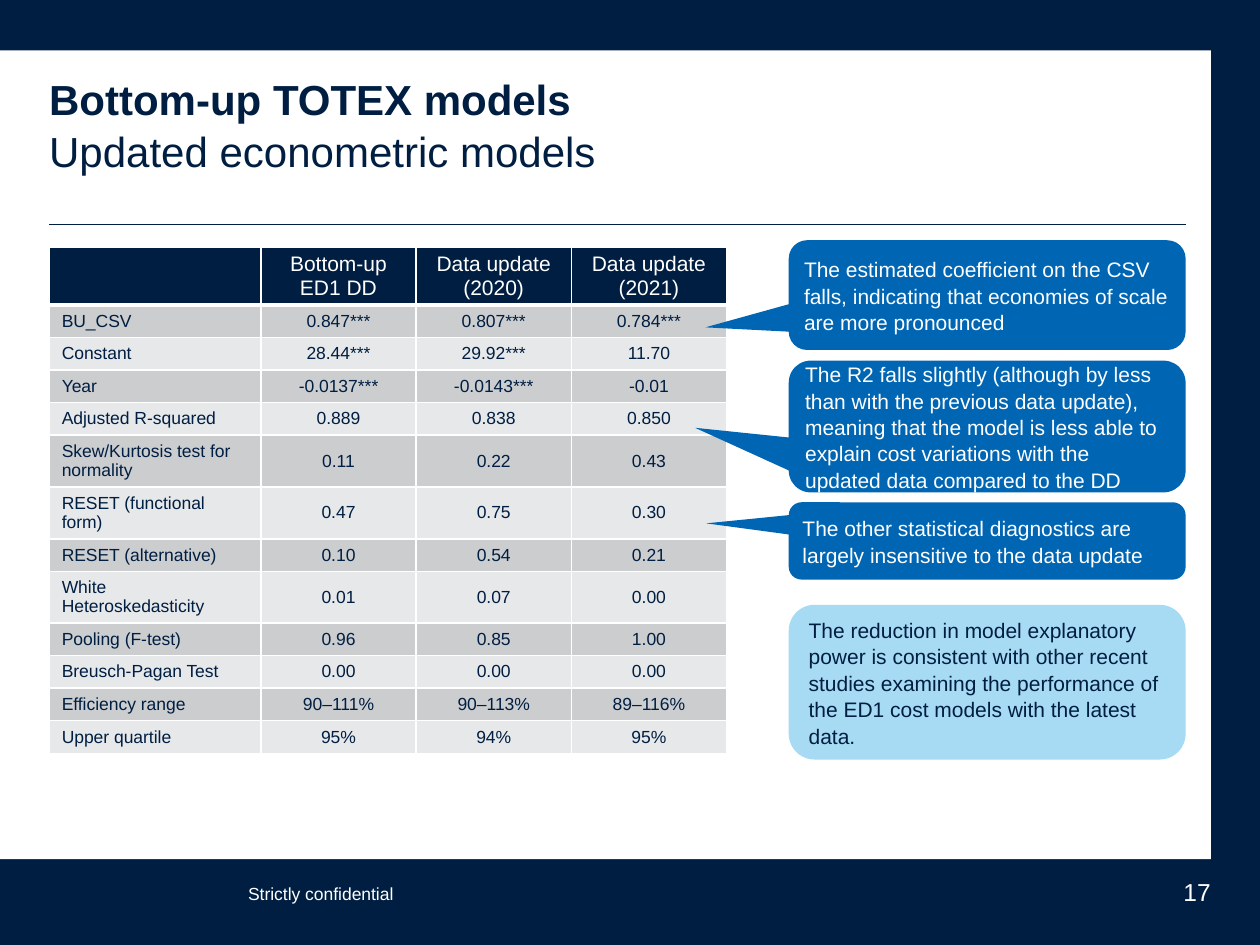
from lxml.etree import SubElement
from pptx import Presentation
from pptx.dml.color import RGBColor
from pptx.enum.shapes import MSO_CONNECTOR, MSO_SHAPE
from pptx.enum.text import MSO_ANCHOR, MSO_AUTO_SIZE, PP_ALIGN
from pptx.oxml.ns import qn
from pptx.util import Pt

NAVY = RGBColor(0x00, 0x1E, 0x41)
BLUE = RGBColor(0x00, 0x66, 0xB3)
SKY = RGBColor(0xA7, 0xDA, 0xF3)
DARK_BAND = RGBColor(0xCC, 0xCD, 0xCF)
LIGHT_BAND = RGBColor(0xE7, 0xE8, 0xE9)
WHITE = RGBColor(0xFF, 0xFF, 0xFF)

LEFT, RIGHT = 28.1, 677.5
CALLOUT_LEFT = 450.7

HEADER = ["", "Bottom-up\vED1 DD", "Data update (2020)", "Data update (2021)"]
RESULTS = [
    ["BU_CSV", "0.847***", "0.807***", "0.784***"],
    ["Constant", "28.44***", "29.92***", "11.70"],
    ["Year", "-0.0137***", "-0.0143***", "-0.01"],
    ["Adjusted R-squared", "0.889", "0.838", "0.850"],
    ["Skew/Kurtosis test for normality", "0.11", "0.22", "0.43"],
    ["RESET (functional form)", "0.47", "0.75", "0.30"],
    ["RESET (alternative)", "0.10", "0.54", "0.21"],
    ["White Heteroskedasticity", "0.01", "0.07", "0.00"],
    ["Pooling (F-test)", "0.96", "0.85", "1.00"],
    ["Breusch-Pagan Test", "0.00", "0.00", "0.00"],
    ["Efficiency range", "90–111%", "90–113%", "89–116%"],
    ["Upper quartile", "95%", "94%", "95%"],
]
TWO_LINE_ROWS = {5, 6, 8}

# top, height, pointer x and y, text
CALLOUTS = [
    (137.3, 62.7, -0.71, 0.294,
     "The estimated coefficient on the CSV falls, indicating that economies "
     "of scale are more pronounced"),
    (206.1, 75.3, -0.736, 0.01,
     "The R2 falls slightly (although by less than with the previous data "
     "update), meaning that the model is less able to explain cost variations "
     "with the updated data compared to the DD"),
    (287, 44.2, -0.708, -0.227,
     "The other statistical diagnostics are largely insensitive to the data update"),
]
CONCLUSION = (
    "The reduction in model explanatory power is consistent with other recent "
    "studies examining the performance of the ED1 cost models with the latest data."
)


def write(frame, text, size, color, align=PP_ALIGN.LEFT, spacing=1.0):
    para = frame.paragraphs[0]
    para.text = text
    para.alignment = align
    para.line_spacing = spacing
    for span in para.runs:
        span.font.name = "Arial"
        span.font.size = Pt(size)
        span.font.color.rgb = color


def set_margins(holder, side, upright):
    holder.margin_left = holder.margin_right = Pt(side)
    holder.margin_top = holder.margin_bottom = Pt(upright)


def add_block(page, kind, box, color):
    shape = page.shapes.add_shape(kind, *map(Pt, box))
    shape.shadow.inherit = False
    shape.fill.solid()
    shape.fill.fore_color.rgb = color
    shape.line.fill.background()
    return shape


def add_frame(page):
    """Navy border with a white panel, kept behind the title."""
    for box, color in (((0, 0, 720, 540), NAVY), ((0, 28.8, 691.9, 462.2), WHITE)):
        block = add_block(page, MSO_SHAPE.RECTANGLE, box, color)
        page.shapes.title.element.addprevious(block.element)
    rule = page.shapes.add_connector(
        MSO_CONNECTOR.STRAIGHT, Pt(LEFT), Pt(128.2), Pt(RIGHT), Pt(128.2))
    rule.line.color.rgb = NAVY
    rule.line.width = Pt(0.75)
    SubElement(rule.element.spPr, qn("a:effectLst"))


def place_title(page, box):
    title = page.shapes.title
    title.left, title.top, title.width, title.height = map(Pt, box)
    frame = title.text_frame
    set_margins(frame, 0, 0)
    frame.word_wrap = True
    frame.auto_size = MSO_AUTO_SIZE.NONE
    frame.vertical_anchor = MSO_ANCHOR.TOP
    write(frame, "Bottom-up TOTEX models\vUpdated econometric models", 24, NAVY,
          spacing=1.05)
    heading, subheading = frame.paragraphs[0].runs
    heading.font.bold = True
    subheading.font.bold = False


def add_borders(cell, top, bottom):
    properties = cell._tc.get_or_add_tcPr()
    for side, width in (("L", 1), ("R", 1), ("T", top), ("B", bottom)):
        line = SubElement(properties, qn(f"a:ln{side}"), w=str(Pt(width)))
        fill = SubElement(line, qn("a:solidFill"))
        SubElement(fill, qn("a:srgbClr"), val=str(WHITE))


def add_results_table(page, box):
    rows = [HEADER] + RESULTS
    table = page.shapes.add_table(len(rows), len(HEADER), *map(Pt, box)).table
    table.first_row = table.horz_banding = False
    for index, column in enumerate(table.columns):
        column.width = Pt(121 if index == 0 else 88.7)
    for r, values in enumerate(rows):
        is_header = r == 0
        if is_header:
            height, band = 33.2, NAVY
        else:
            height = 29.6 if r in TWO_LINE_ROWS else 18.6
            band = DARK_BAND if r % 2 else LIGHT_BAND
        table.rows[r].height = Pt(height)
        for c, value in enumerate(values):
            cell = table.cell(r, c)
            add_borders(cell, 3 if r == 1 else 1, 3 if is_header else 1)
            cell.fill.solid()
            cell.fill.fore_color.rgb = band
            cell.vertical_anchor = MSO_ANCHOR.MIDDLE
            set_margins(cell, 7.2, 3)
            write(cell.text_frame, value, 12 if is_header else 10,
                  WHITE if is_header else NAVY,
                  PP_ALIGN.CENTER if c else PP_ALIGN.LEFT)


def add_comment(page, kind, box, text, fill, color, side, upright):
    shape = add_block(page, kind, box, fill)
    frame = shape.text_frame
    frame.word_wrap = True
    frame.vertical_anchor = MSO_ANCHOR.MIDDLE
    set_margins(frame, side, upright)
    write(frame, text, 12, color, spacing=1.05)
    return shape


def add_comments(page, left, width):
    for top, height, pointer_x, pointer_y, text in CALLOUTS:
        callout = add_comment(page, MSO_SHAPE.ROUNDED_RECTANGULAR_CALLOUT,
                              (left, top, width, height), text, BLUE, WHITE, 5.7, 5.7)
        callout.adjustments[0] = pointer_x
        callout.adjustments[1] = pointer_y
    add_comment(page, MSO_SHAPE.ROUNDED_RECTANGLE, (left, 345.6, width, 88.4),
                CONCLUSION, SKY, NAVY, 7.2, 3.6)


def add_label(page, box, text, size, align):
    frame = page.shapes.add_textbox(*map(Pt, box)).text_frame
    frame.word_wrap = True
    set_margins(frame, 0, 0)
    write(frame, text, size, WHITE, align)


def main():
    deck = Presentation()
    deck.slide_width, deck.slide_height = Pt(720), Pt(540)
    page = deck.slides.add_slide(deck.slide_layouts[5])
    add_frame(page)
    place_title(page, (LEFT, 40.3, RIGHT - LEFT, 65.5))
    add_results_table(page, (LEFT, 141.1, 387.1, 290))
    add_comments(page, CALLOUT_LEFT, RIGHT - CALLOUT_LEFT)
    add_label(page, (141.8, 504.7, 105, 12), "Strictly confidential", 10, PP_ALIGN.LEFT)
    add_label(page, (629.3, 501, 62.6, 16.5), "17", 14, PP_ALIGN.RIGHT)
    deck.save("out.pptx")


if __name__ == "__main__":
    main()
